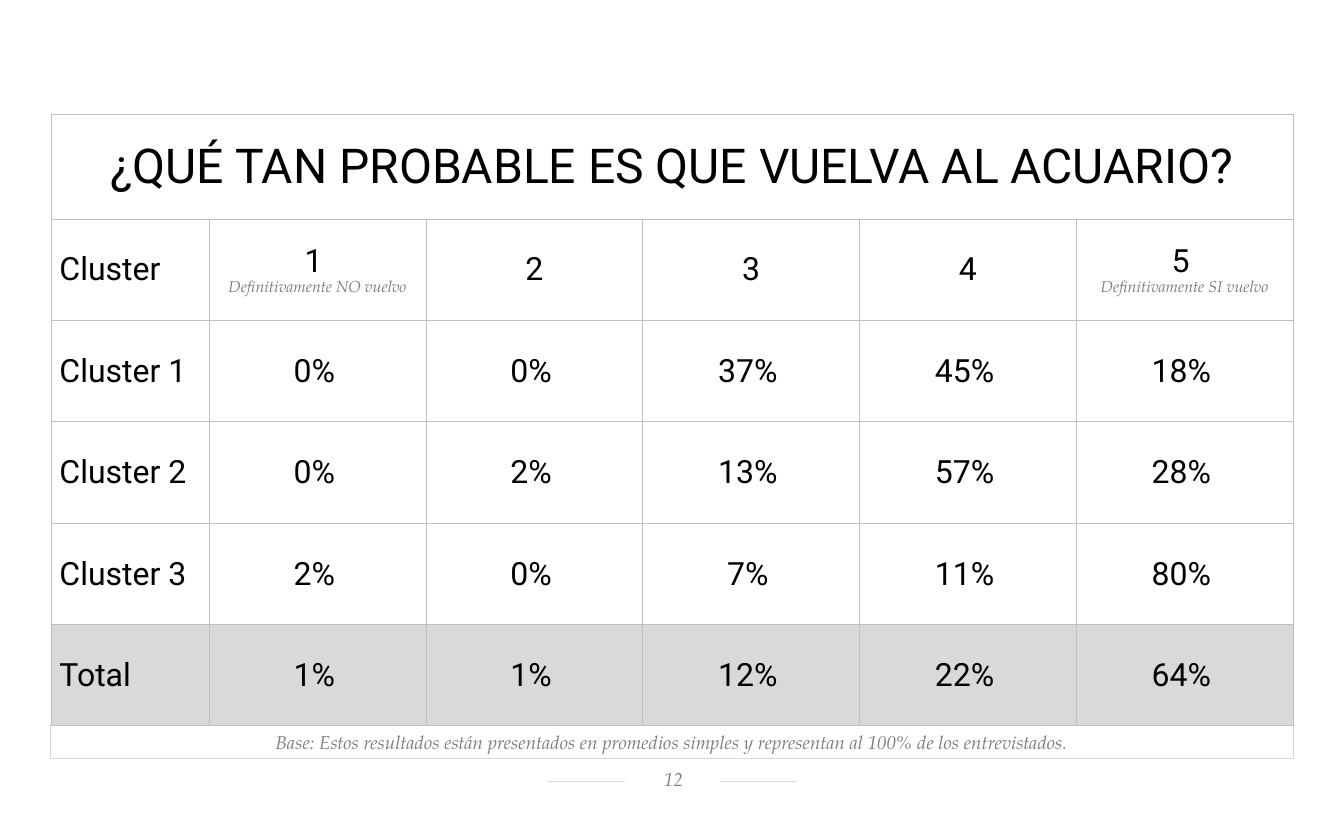
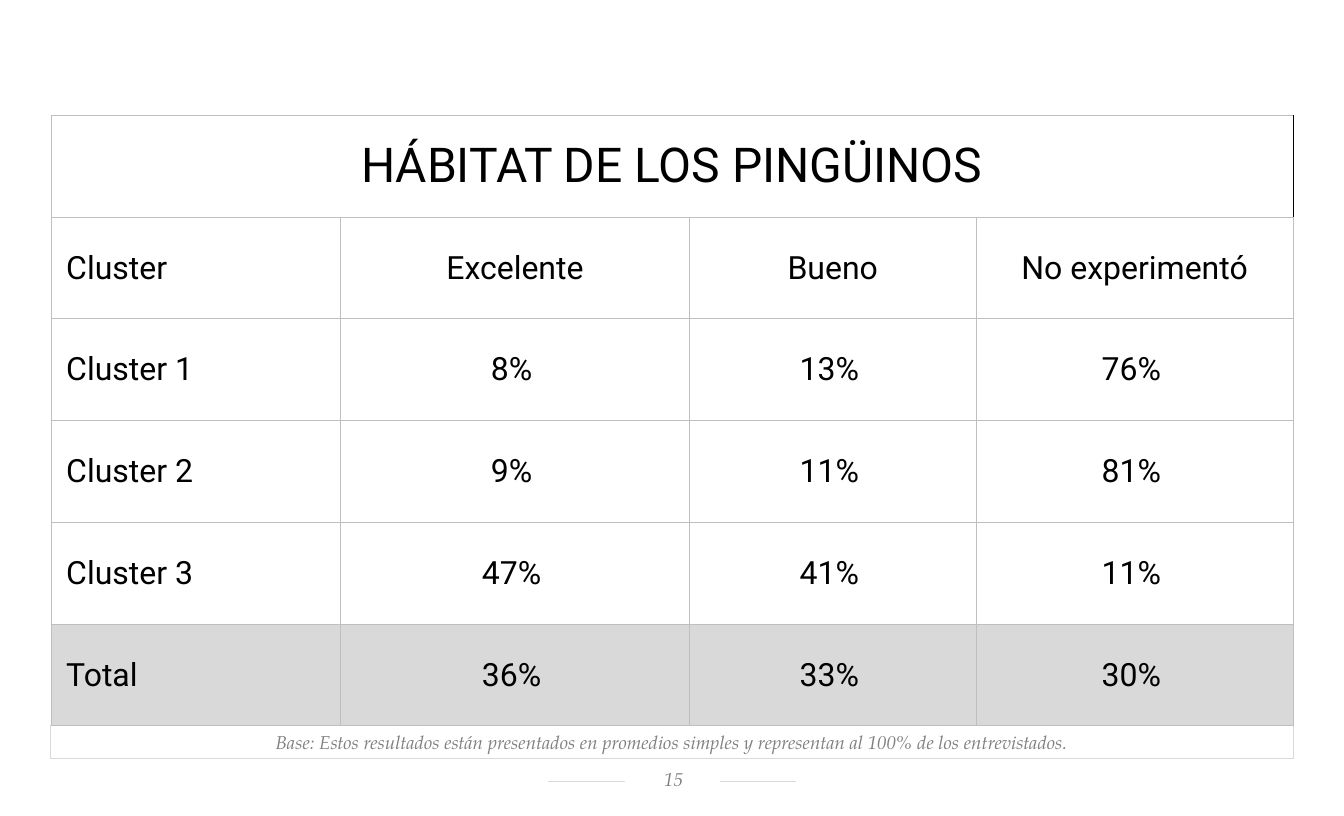
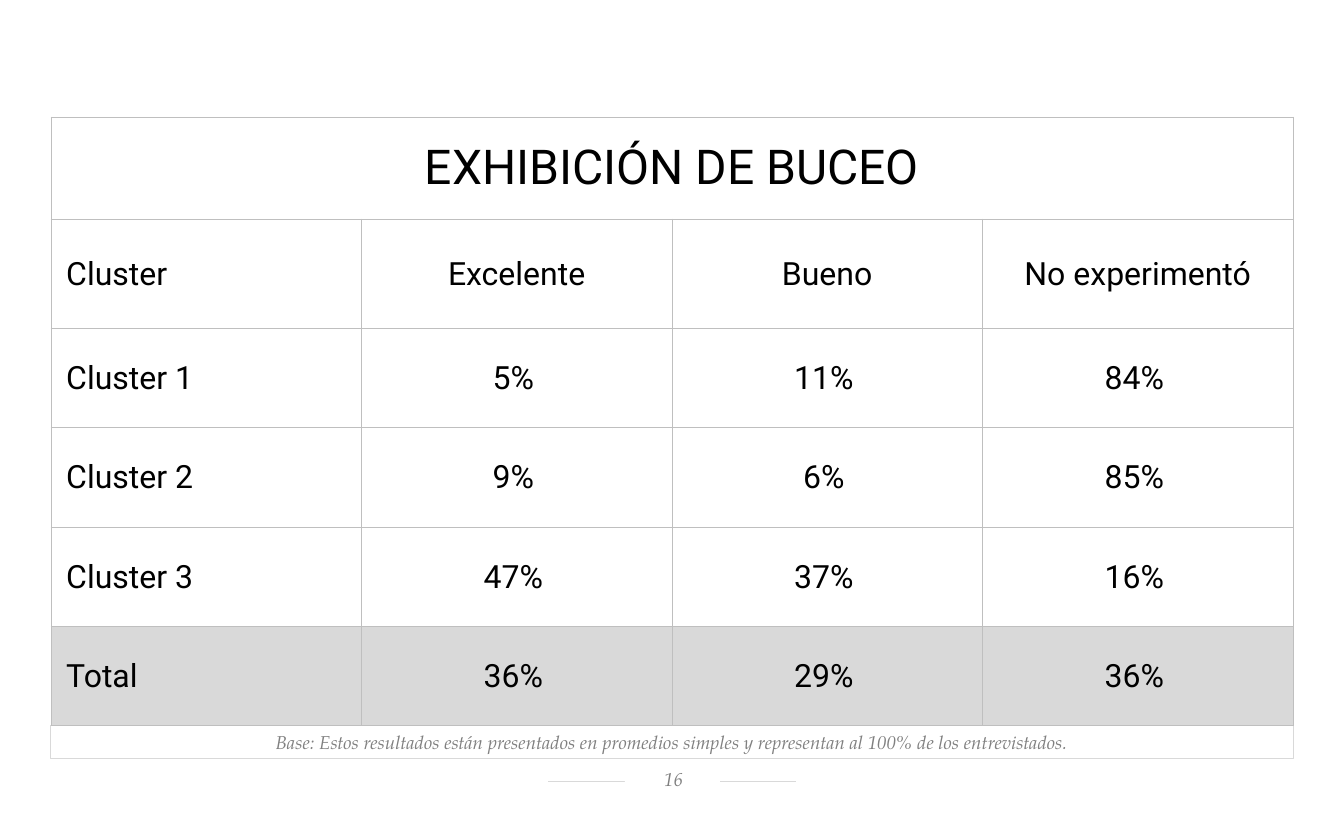
"""Build three slides of aquarium survey tables by visitor cluster."""
from lxml.etree import SubElement
from pptx import Presentation
from pptx.dml.color import RGBColor
from pptx.enum.shapes import MSO_CONNECTOR, MSO_SHAPE
from pptx.enum.text import MSO_ANCHOR, MSO_AUTO_SIZE, PP_ALIGN
from pptx.oxml.ns import qn
from pptx.util import Inches, Pt

rgb = RGBColor.from_string
BLACK, GREY, BORDER, PALE, WHITE = "000000", "808080", "BFBFBF", "D9D9D9", "FFFFFF"
SANS, SERIF = "Roboto", "TeX Gyre Pagella"
LEFT, WIDTH, BASE_TOP = 0.53, 12.94, 7.56
BASE = "Base: Estos resultados están presentados en promedios simples y representan al 100% de los entrevistados."
RATINGS = ["Cluster", "Excelente", "Bueno", "No experimentó"]

surveys = [
    {"page": "12", "title": "¿QUÉ TAN PROBABLE ES QUE VUELVA AL ACUARIO?",
     "height": 6.37, "first_rows": [1.09], "first_columns": [1.65],
     "label_inset": 0.01, "title_edge": BORDER,
     "rows": [["Cluster", "1 \nDefinitivamente NO vuelvo", "2", "3", "4", "5 \nDefinitivamente SI vuelvo"],
              ["Cluster 1", "0%", "0%", "37%", "45%", "18%"],
              ["Cluster 2", "0%", "2%", "13%", "57%", "28%"],
              ["Cluster 3", "2%", "0%", "7%", "11%", "80%"],
              ["Total", "1%", "1%", "12%", "22%", "64%"]]},
    {"page": "15", "title": "HÁBITAT DE LOS PINGÜINOS",
     "height": 6.36, "first_rows": [], "first_columns": [3.02, 3.63, 2.99],
     "label_inset": 0.08, "title_edge": BLACK,
     "rows": [RATINGS,
              ["Cluster 1", "8%", "13%", "76%"],
              ["Cluster 2", "9%", "11%", "81%"],
              ["Cluster 3", "47%", "41%", "11%"],
              ["Total", "36%", "33%", "30%"]]},
    {"page": "16", "title": "EXHIBICIÓN DE BUCEO",
     "height": 6.34, "first_rows": [1.06, 1.14], "first_columns": [],
     "label_inset": 0.08, "title_edge": BORDER,
     "rows": [RATINGS,
              ["Cluster 1", "5%", "11%", "84%"],
              ["Cluster 2", "9%", "6%", "85%"],
              ["Cluster 3", "47%", "37%", "16%"],
              ["Total", "36%", "29%", "36%"]]},
]


def set_lengths(bands, attribute, total, first):
    """Give the first bands their lengths and share the rest equally."""
    rest = (total - sum(first)) / (len(bands) - len(first))
    for index, band in enumerate(bands):
        setattr(band, attribute, Inches(first[index] if index < len(first) else rest))


def format_text(paragraph, size, font=SANS, color=BLACK, align=PP_ALIGN.CENTER):
    """Format a paragraph and its runs; the serif face is always italic."""
    paragraph.alignment = align
    for run in paragraph.runs:
        run.font.size, run.font.name = Pt(size), font
        run.font.italic = font == SERIF
        run.font.color.rgb = rgb(color)


deck = Presentation()
deck.slide_width, deck.slide_height = Inches(14), Inches(8.5)

for survey in surveys:
    slide = deck.slides.add_slide(deck.slide_layouts[6])

    rule = slide.shapes.add_connector(
        MSO_CONNECTOR.STRAIGHT, Inches(5.71), Inches(8.14), Inches(8.29), Inches(8.14))
    rule.line.color.rgb, rule.line.width = rgb(PALE), Pt(0.5)
    SubElement(rule.element.spPr, qn("a:effectLst"))

    page_number, base_note = [
        slide.shapes.add_shape(MSO_SHAPE.RECTANGLE, *map(Inches, place))
        for place in [(6.51, 7.98, 0.99, 0.29), (LEFT, BASE_TOP, WIDTH, 0.34)]]
    for footer, text in [(page_number, survey["page"]), (base_note, BASE)]:
        footer.shadow.inherit = False
        footer.fill.solid()
        footer.fill.fore_color.rgb = rgb(WHITE)
        footer.text_frame.text = text
        format_text(footer.text_frame.paragraphs[0], 14, SERIF, GREY)
    page_number.line.fill.background()
    number_frame = page_number.text_frame
    number_frame.vertical_anchor = MSO_ANCHOR.MIDDLE
    number_frame.margin_left, number_frame.margin_top = Inches(0.12), Inches(0.02)
    base_note.line.color.rgb, base_note.line.width = rgb(PALE), Pt(0.75)
    base_note.text_frame.vertical_anchor = MSO_ANCHOR.BOTTOM
    base_note.text_frame.auto_size = MSO_AUTO_SIZE.SHAPE_TO_FIT_TEXT

    column_count = len(survey["rows"][0])
    title_row = [survey["title"]] + [""] * (column_count - 1)
    rows = [title_row] + survey["rows"]
    results = slide.shapes.add_table(
        len(rows), column_count, Inches(LEFT), Inches(BASE_TOP - survey["height"]),
        Inches(WIDTH), Inches(survey["height"])).table
    results.first_row = results.horz_banding = False
    set_lengths(results.columns, "width", WIDTH, survey["first_columns"])
    set_lengths(results.rows, "height", survey["height"], survey["first_rows"])
    results.cell(0, 0).merge(results.cell(0, column_count - 1))

    for row, texts in enumerate(rows):
        for column, text in enumerate(texts):
            cell = results.cell(row, column)
            is_label = row > 0 and column == 0
            is_value = row > 1 and column > 0
            cell.vertical_anchor = MSO_ANCHOR.MIDDLE
            cell.margin_left = Inches(survey["label_inset"] if is_label else 0.01)
            cell.margin_right = Inches(0.08 if is_value else 0.01)
            cell.margin_top, cell.margin_bottom = Inches(0.01), 0

            properties = cell._tc.get_or_add_tcPr()
            for side in ("lnL", "lnR", "lnT", "lnB"):
                color = survey["title_edge"] if row == 0 and side == "lnR" else BORDER
                edge = SubElement(properties, qn(f"a:{side}"), w=str(Pt(0.5)))
                SubElement(SubElement(edge, qn("a:solidFill")), qn("a:srgbClr"), val=color)
            if texts[0] == "Total":
                cell.fill.solid()
                cell.fill.fore_color.rgb = rgb(PALE)
            else:
                cell.fill.background()

            if text:
                cell.text_frame.text = text
                main, *captions = cell.text_frame.paragraphs
                format_text(main, 36 if row == 0 else 24,
                            align=PP_ALIGN.LEFT if is_label else PP_ALIGN.CENTER)
                if is_label:
                    main._p.get_or_add_pPr().set("marL", str(Inches(0.08)))
                for caption in captions:
                    format_text(caption, 12, SERIF, GREY)

deck.save("out.pptx")
